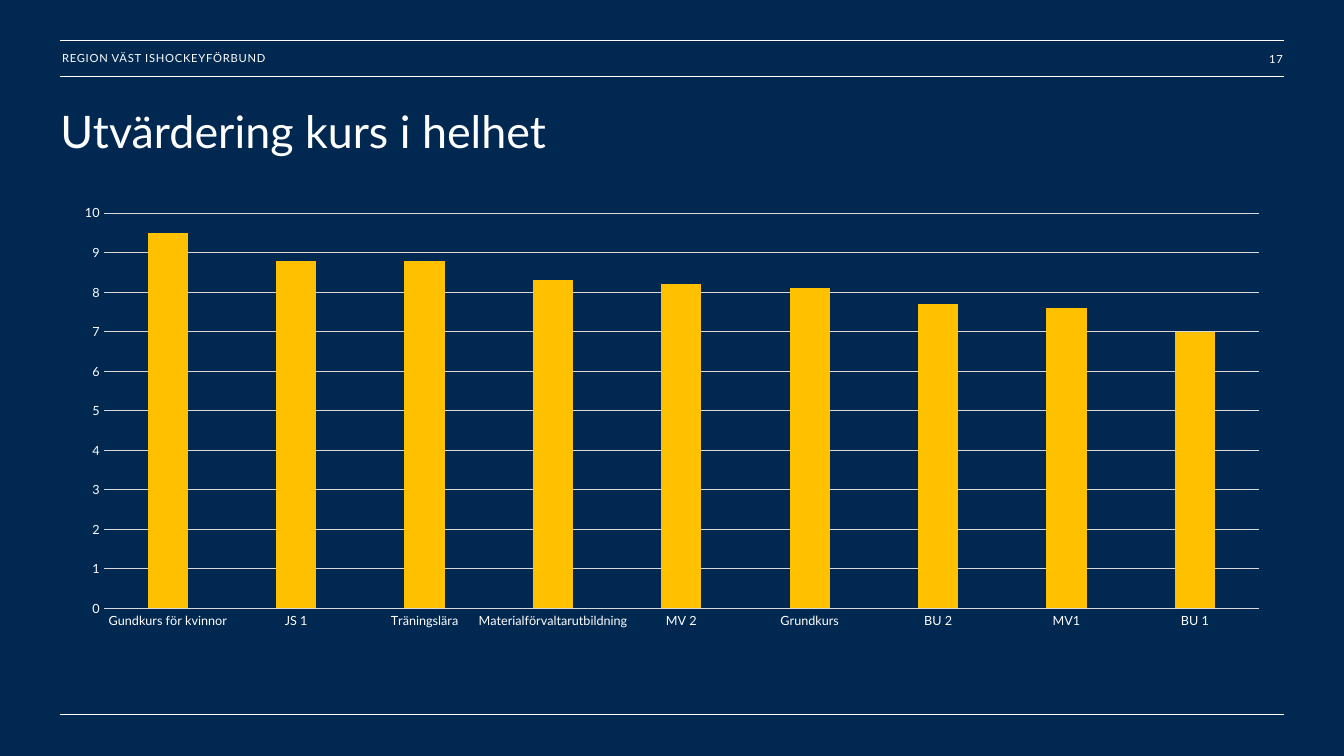
from lxml import etree
from pptx import Presentation
from pptx import util as u
from pptx.chart import data
from pptx.dml import color
from pptx.enum import chart as c
from pptx.enum import shapes, text
from pptx.oxml import ns

NAVY, WHITE, GREY, AMBER = "002850", "FFFFFF", "D9D9D9", "FFC000"
LEFT, RIGHT = 4.5, 95.5
HEADER_TOP, HEADER_BOTTOM, FOOTER = 5.33, 10.13, 94.53
RATINGS = {
    "Gundkurs för kvinnor": 9.5,
    "JS 1": 8.8,
    "Träningslära": 8.8,
    "Materialförvaltarutbildning": 8.3,
    "MV 2": 8.2,
    "Grundkurs": 8.1,
    "BU 2": 7.7,
    "MV1": 7.6,
    "BU 1": 7,
}


def rgb(value):
    return color.RGBColor.from_string(value)


class SlideBuilder:
    """Draws styled elements placed in percent of the slide's size."""

    def __init__(self, presentation, background, font="Lato", ink=WHITE):
        self.width, self.height = presentation.slide_width, presentation.slide_height
        self.font, self.ink = font, ink
        self.slide = presentation.slides.add_slide(presentation.slide_layouts[6])
        fill = self.slide.background.fill
        fill.solid()
        fill.fore_color.rgb = rgb(background)

    def place(self, *shares):
        sizes = (self.width, self.height) * 2
        return [round(size * share / 100) for size, share in zip(sizes, shares)]

    def style(self, font, size):
        font.name, font.size = self.font, u.Pt(size)
        font.color.rgb = rgb(self.ink)

    def rule(self, y):
        line = self.slide.shapes.add_connector(
            shapes.MSO_CONNECTOR.STRAIGHT, *self.place(LEFT, y, RIGHT, y))
        line.line.color.rgb = rgb(self.ink)
        line.line.width = u.Pt(1)
        etree.SubElement(line._element.spPr, ns.qn("a:effectLst"))

    def label(self, words, box, size, anchor=text.MSO_ANCHOR.MIDDLE,
              align=text.PP_ALIGN.LEFT, spacing=0, inset_top=0):
        frame = self.slide.shapes.add_textbox(*self.place(*box)).text_frame
        frame.word_wrap = True
        frame.vertical_anchor = anchor
        frame.margin_left = frame.margin_right = frame.margin_bottom = 0
        frame.margin_top = u.Inches(inset_top)
        frame.text = words
        paragraph = frame.paragraphs[0]
        paragraph.alignment = align
        run = paragraph.runs[0]
        self.style(run.font, size)
        if spacing:
            run._r.get_or_add_rPr().set("spc", str(round(spacing * 100)))

    def columns(self, ratings, box, fill, grid):
        chart_data = data.CategoryChartData()
        chart_data.categories = list(ratings)
        chart_data.add_series("Series 1", list(ratings.values()))
        chart = self.slide.shapes.add_chart(
            c.XL_CHART_TYPE.COLUMN_CLUSTERED, *self.place(*box), chart_data).chart
        chart.has_legend = chart.has_title = False
        self.style(chart.font, 10)

        plot = chart.plots[0]
        plot.gap_width, plot.overlap, plot.vary_by_categories = 219, -27, False
        series_fill = plot.series[0].format.fill
        series_fill.solid()
        series_fill.fore_color.rgb = rgb(fill)

        categories, values = chart.category_axis, chart.value_axis
        for axis in (categories, values):
            axis.major_tick_mark = axis.minor_tick_mark = c.XL_TICK_MARK.NONE
            self.style(axis.tick_labels.font, 9)
        values.minimum_scale, values.maximum_scale, values.major_unit = 0, 10, 1
        values.has_major_gridlines = True
        values.format.line.fill.background()
        for line in (categories.format.line, values.major_gridlines.format.line):
            line.color.rgb = rgb(grid)
            line.width = u.Pt(0.75)


def main():
    presentation = Presentation()
    presentation.slide_width, presentation.slide_height = u.Inches(13.33), u.Inches(7.5)
    builder = SlideBuilder(presentation, NAVY)
    for y in (HEADER_TOP, HEADER_BOTTOM, FOOTER):
        builder.rule(y)
    builder.label("REGION VÄST ISHOCKEYFÖRBUND", (4.62, HEADER_TOP, 25.2, 4.67), 8,
                  spacing=0.5)
    builder.label("17", (88.75, HEADER_TOP, 6.7, 4.53), 8,
                  align=text.PP_ALIGN.RIGHT, spacing=0.5, inset_top=0.04)
    builder.label("Utvärdering kurs i helhet", (LEFT, 13.73, RIGHT - LEFT, 10), 32,
                  anchor=text.MSO_ANCHOR.TOP)
    builder.columns(RATINGS, (LEFT, 26, RIGHT - LEFT, 58.27), AMBER, GREY)
    presentation.save("out.pptx")


if __name__ == "__main__":
    main()
